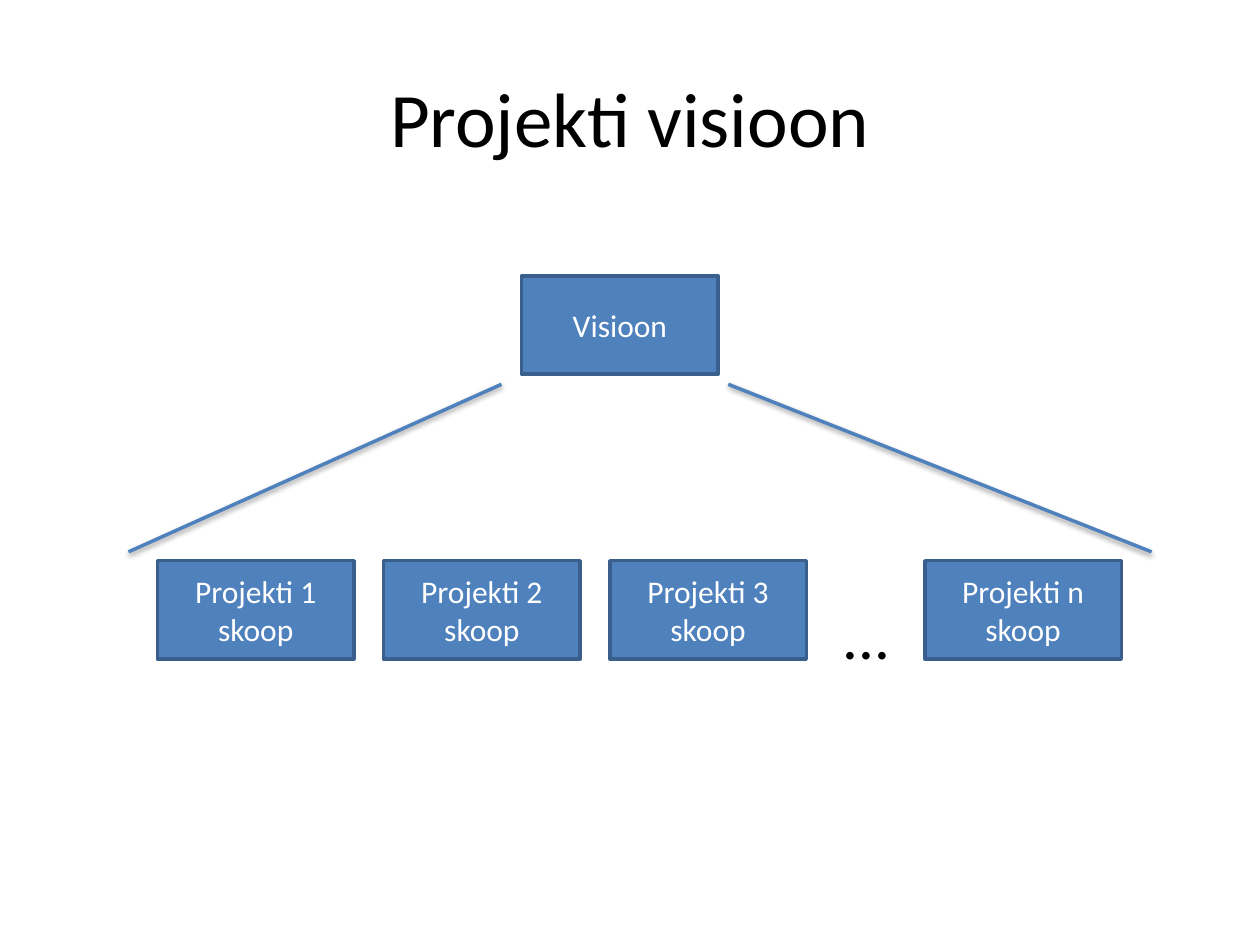
"""Build the project vision slide: one vision above a row of project scopes."""
from lxml import etree
from pptx import Presentation
from pptx import util as u
from pptx.dml import color
from pptx.enum import shapes, text
from pptx.oxml import ns

presentation = Presentation()
presentation.slide_width, presentation.slide_height = u.Inches(10), u.Inches(7.5)
column = presentation.slide_width / 100
row = presentation.slide_height / 100
slide = presentation.slides.add_slide(presentation.slide_layouts[5])


def paint(target, value):
    target.rgb = color.RGBColor.from_string(value)


def write(shape, words, size, value, alignment):
    paragraph = shape.text_frame.paragraphs[0]
    paragraph.alignment = alignment
    run = paragraph.add_run()
    run.text = words
    run.font.name = "Calibri"
    run.font.size = u.Pt(size)
    paint(run.font.color, value)


title = slide.shapes.title
title.left, title.top = int(5 * column), int(4 * row)
title.width, title.height = int(90 * column), int(16.67 * row)
title.text_frame.vertical_anchor = text.MSO_ANCHOR.MIDDLE
write(title, "Projekti visioon", 44, "000000", text.PP_ALIGN.CENTER)

box_width, box_height = 15.6, 10.4
first_left, pitch, scope_top = 12.5, 17.95, 59.33
boxes = [("Visioon", 41.4, 29.2)]
boxes += [(f"Projekti {i + 1} skoop", first_left + i * pitch, scope_top) for i in range(3)]
boxes += [("Projekti n skoop", 73.4, scope_top)]
for words, left, top in boxes:
    box = slide.shapes.add_shape(
        shapes.MSO_SHAPE.RECTANGLE,
        int(left * column), int(top * row), int(box_width * column), int(box_height * row),
    )
    box.shadow.inherit = False
    box.fill.solid()
    paint(box.fill.fore_color, "4F81BD")
    paint(box.line.color, "3A5F8C")
    box.line.width = u.Pt(2)
    box.text_frame.word_wrap = True
    box.text_frame.vertical_anchor = text.MSO_ANCHOR.MIDDLE
    write(box, words, 18, "FFFFFF", text.PP_ALIGN.CENTER)

branch_top, branch_bottom = 40.67, 58.4
branches = [
    (10.2, branch_bottom, 39.8, branch_top),
    (57.8, branch_top, 91.4, branch_bottom),
]
for start_x, start_y, end_x, end_y in branches:
    branch = slide.shapes.add_connector(
        shapes.MSO_CONNECTOR.STRAIGHT,
        int(start_x * column), int(start_y * row), int(end_x * column), int(end_y * row),
    )
    paint(branch.line.color, "4F81BD")
    branch.line.width = u.Pt(2)
    effects = etree.SubElement(branch.element.spPr, ns.qn("a:effectLst"))
    shadow = etree.SubElement(
        effects, ns.qn("a:outerShdw"),
        blurRad=str(u.Pt(3.1)), dist=str(u.Pt(1.6)), dir="5400000", rotWithShape="0",
    )
    shade = etree.SubElement(shadow, ns.qn("a:srgbClr"), val="000000")
    etree.SubElement(shade, ns.qn("a:alpha"), val="38000")

ellipsis = slide.shapes.add_textbox(
    int(65.9 * column), int(62.5 * row), int(5.9 * column), int(9.47 * row)
)
ellipsis.text_frame.word_wrap = False
ellipsis.text_frame.auto_size = text.MSO_AUTO_SIZE.SHAPE_TO_FIT_TEXT
write(ellipsis, "...", 36, "000000", text.PP_ALIGN.LEFT)

presentation.save("out.pptx")
